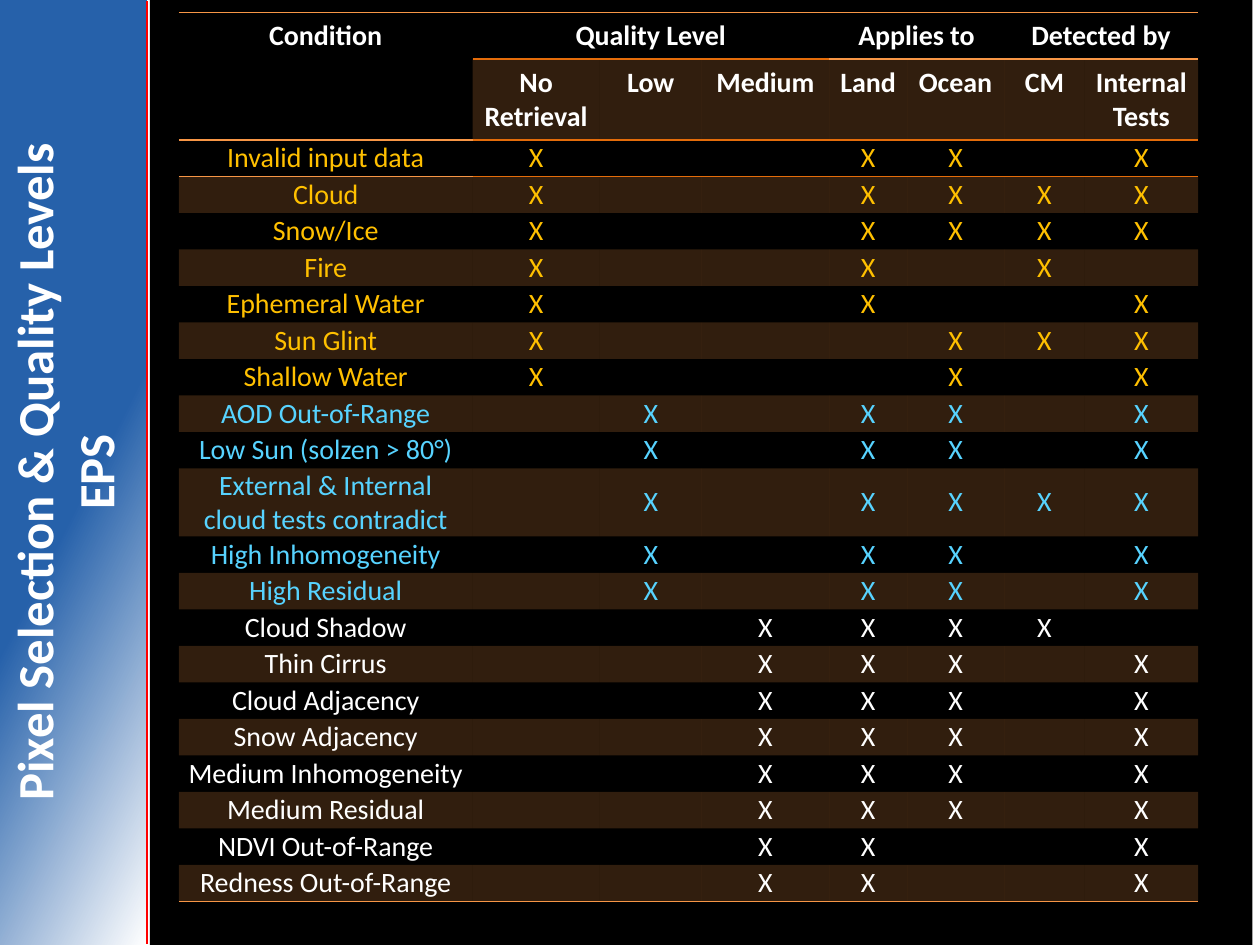
from lxml import etree
from pptx import Presentation, util as u
from pptx.dml.color import RGBColor
from pptx.enum import shapes, text
from pptx.oxml.ns import qn

PX = u.Inches(1) // 100
WHITE, BLACK, RED, BLUE = "FFFFFF", "000000", "FF0000", "2661AA"
ORANGE, DARK_ORANGE, AMBER, SKY = "F79646", "E46C0A", "FFC000", "57D3FF"
NO_STYLE = "{2D5ABB26-0587-4C30-8999-92F81FD0307C}"

COLUMNS = [233, 101, 81, 101, 62, 77, 64, 90]
GROUPS = [("Condition", 0, 0), ("Quality Level", 1, 3), ("Applies to", 4, 5), ("Detected by", 6, 7)]
SUBHEADS = ["No Retrieval", "Low", "Medium", "Land", "Ocean", "CM", "Internal Tests"]

# Each level: its column, its colour, and its conditions with the other marked columns
LEVELS = [
    (1, AMBER, [
        ("Invalid input data", [4, 5, 7]),
        ("Cloud", [4, 5, 6, 7]),
        ("Snow/Ice", [4, 5, 6, 7]),
        ("Fire", [4, 6]),
        ("Ephemeral Water", [4, 7]),
        ("Sun Glint", [5, 6, 7]),
        ("Shallow Water", [5, 7]),
    ]),
    (2, SKY, [
        ("AOD Out-of-Range", [4, 5, 7]),
        ("Low Sun (solzen > 80°)", [4, 5, 7]),
        ("External & Internal cloud tests contradict", [4, 5, 6, 7]),
        ("High Inhomogeneity", [4, 5, 7]),
        ("High Residual", [4, 5, 7]),
    ]),
    (3, WHITE, [
        ("Cloud Shadow", [4, 5, 6]),
        ("Thin Cirrus", [4, 5, 7]),
        ("Cloud Adjacency", [4, 5, 7]),
        ("Snow Adjacency", [4, 5, 7]),
        ("Medium Inhomogeneity", [4, 5, 7]),
        ("Medium Residual", [4, 5, 7]),
        ("NDVI Out-of-Range", [4, 7]),
        ("Redness Out-of-Range", [4, 7]),
    ]),
]
ROWS = [(name, [level, *marks], color) for level, color, rows in LEVELS for name, marks in rows]


def rgb(value):
    return RGBColor.from_string(value)


class SlideBuilder:
    font = "Calibri"
    table_size = 16

    def __init__(self, page):
        self.page = page

    def rect(self, left, top, width, height, color):
        box = self.page.shapes.add_shape(
            shapes.MSO_SHAPE.RECTANGLE, left * PX, top * PX, width * PX, height * PX)
        box.shadow.inherit = False
        box.line.fill.background()
        box.fill.solid()
        box.fill.fore_color.rgb = rgb(color)
        return box

    def gradient_rect(self, left, top, width, height, stops, angle):
        box = self.rect(left, top, width, height, WHITE)
        box.fill.gradient()
        box.fill.gradient_angle = angle
        for stop, (position, color) in zip(box.fill.gradient_stops, stops):
            stop.position = position
            stop.color.rgb = rgb(color)
        return box

    def line(self, x1, y1, x2, y2, color, width):
        line = self.page.shapes.add_connector(
            shapes.MSO_CONNECTOR.STRAIGHT, x1 * PX, y1 * PX, x2 * PX, y2 * PX)
        line.line.color.rgb = rgb(color)
        line.line.width = u.Pt(width)
        etree.SubElement(line._element.spPr, qn("a:effectLst"))

    def span(self, para, words, size, color, bold):
        span = para.add_run()
        span.text = words
        span.font.name = self.font
        span.font.size = u.Pt(size)
        span.font.bold = bold
        span.font.color.rgb = rgb(color)

    def title(self, left, top, width, height, lines, size):
        box = self.page.shapes.add_textbox(left * PX, top * PX, width * PX, height * PX)
        box.rotation = 270
        frame = box.text_frame
        frame.word_wrap = True
        frame.vertical_anchor = text.MSO_ANCHOR.MIDDLE
        para = frame.paragraphs[0]
        para.alignment = text.PP_ALIGN.CENTER
        for index, words in enumerate(lines):
            if index:
                para.add_line_break()
            self.span(para, words, size, WHITE, True)

    def table(self, left, top, columns, rows):
        frame = self.page.shapes.add_table(
            len(rows), len(columns), left * PX, top * PX, sum(columns) * PX, sum(rows) * PX)
        table = frame.table
        table.first_row = table.horz_banding = False
        table._tbl.tblPr.find(qn("a:tableStyleId")).text = NO_STYLE
        for column, width in zip(table.columns, columns):
            column.width = width * PX
        for row, height in zip(table.rows, rows):
            row.height = height * PX
        return table

    def cell(self, cell, words, color=WHITE, header=False, tinted=False):
        cell.margin_left = cell.margin_right = (8 if header else 6) * PX
        cell.margin_top = cell.margin_bottom = (5 if header else 0) * PX
        cell.vertical_anchor = text.MSO_ANCHOR.TOP if header else text.MSO_ANCHOR.MIDDLE
        para = cell.text_frame.paragraphs[0]
        para.alignment = text.PP_ALIGN.CENTER
        if words:
            self.span(para, words, self.table_size, color, header)
        else:
            end = etree.SubElement(para._p, qn("a:endParaRPr"))
            end.set("sz", str(self.table_size * 100))
        if tinted:
            cell.fill.solid()
            cell.fill.fore_color.rgb = rgb(ORANGE)
            tint = cell._tc.tcPr.find(".//" + qn("a:srgbClr"))
            etree.SubElement(tint, qn("a:alpha")).set("val", "20000")
        else:
            cell.fill.background()

    def borders(self, cell, top=None, bottom=None):
        for tag, color in (("a:lnB", bottom), ("a:lnT", top)):
            if color:
                edge = etree.Element(qn(tag), w=str(u.Pt(1)))
                fill = etree.SubElement(edge, qn("a:solidFill"))
                etree.SubElement(fill, qn("a:srgbClr")).set("val", color)
                cell._tc.get_or_add_tcPr().insert(0, edge)


def add_quality_table(builder):
    heights = [37, 64] + [54 if name.startswith("External") else 29 for name, _, _ in ROWS]
    table = builder.table(142, 10, COLUMNS, heights)

    for name, first, last in GROUPS:
        builder.cell(table.cell(0, first), name, header=True)
        edge = DARK_ORANGE if name == "Quality Level" else ORANGE
        for column in range(first, last + 1):
            builder.borders(table.cell(0, column), top=ORANGE, bottom=edge)
        table.cell(0, first).merge(table.cell(1 if last == 0 else 0, last))
    builder.borders(table.cell(1, 0), bottom=ORANGE)

    for column, name in enumerate(SUBHEADS, 1):
        cell = table.cell(1, column)
        builder.cell(cell, name, header=True, tinted=True)
        builder.borders(cell, top=DARK_ORANGE if column < 4 else ORANGE, bottom=DARK_ORANGE)

    for row, (name, marks, color) in enumerate(ROWS, 2):
        for column in range(len(COLUMNS)):
            cell = table.cell(row, column)
            words = name if column == 0 else "X" if column in marks else ""
            builder.cell(cell, words, color, tinted=row % 2 == 1)
            if row == 2:
                builder.borders(cell, top=DARK_ORANGE if column else ORANGE)
            elif row == len(heights) - 1:
                builder.borders(cell, bottom=ORANGE)


def main():
    deck = Presentation()
    deck.slide_width, deck.slide_height = 1000 * PX, 750 * PX
    builder = SlideBuilder(deck.slides.add_slide(deck.slide_layouts[6]))

    banner = builder.gradient_rect(-317, 317, 750, 117, [(0, WHITE), (0.47, BLUE)], 63)
    banner.rotation = 270
    builder.line(117, 749, 117, 1, RED, 1.25)
    builder.title(-233, 333, 567, 83, ["Pixel Selection & Quality Levels", "EPS"], 29)
    builder.rect(119, 0, 875, 750, BLACK)
    add_quality_table(builder)

    deck.save("out.pptx")


if __name__ == "__main__":
    main()
